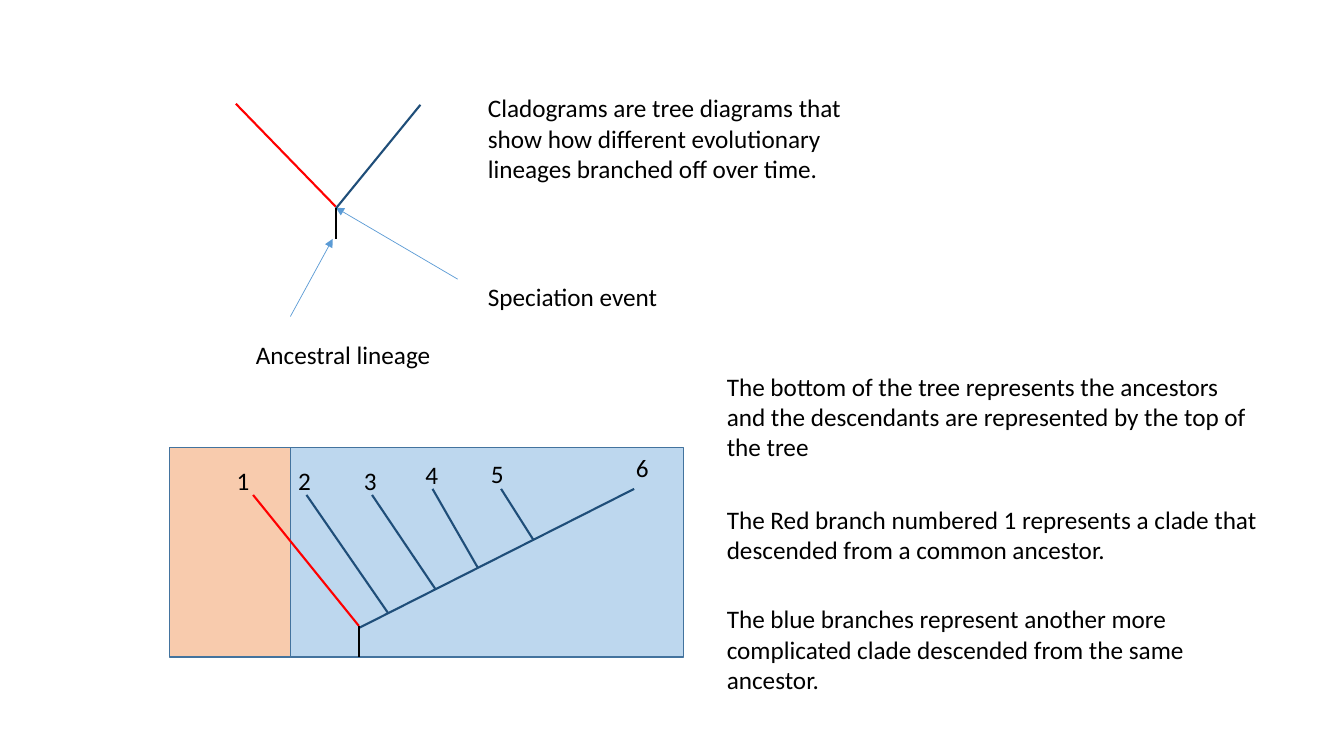
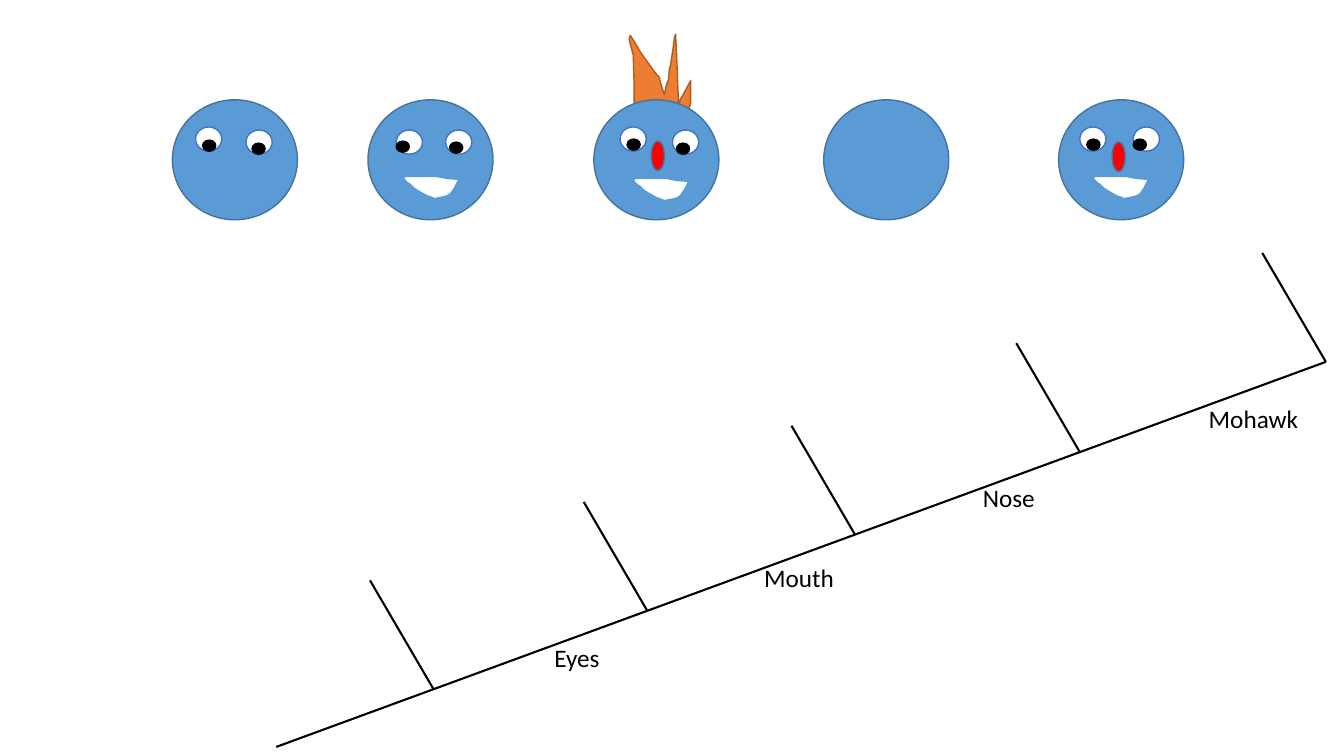
from dataclasses import dataclass
from typing import Optional

from lxml.etree import SubElement
from pptx import Presentation
from pptx.dml.color import RGBColor
from pptx.enum.shapes import MSO_CONNECTOR, MSO_SHAPE
from pptx.enum.text import MSO_AUTO_SIZE
from pptx.oxml.ns import qn
from pptx.shapes.autoshape import Shape
from pptx.slide import Slide
from pptx.util import Emu, Inches, Pt

Point = tuple[float, float]

# Every position and size counts cells of a one-inch grid.
CELL = Inches(1)
SLIDE_COLUMNS, SLIDE_ROWS = 13.33, 7.5
FONT_NAME, FONT_SIZE = "Calibri", Pt(18)
TEXT_ROW = 0.4

COLORS = {
    "text": "000000",
    "black": "000000",
    "white": "FFFFFF",
    "red": "FF0000",
    "navy": "1F4E79",
    "blue": "5B9BD5",
    "blue edge": "43739E",
    "eye edge": "4472C4",
    "pale blue": "BDD7EE",
    "peach": "F8CBAD",
    "orange": "ED7D31",
    "orange edge": "AF5C24",
}

HEAD_TOP = 0.99
HEAD_SIZE = (1.24, 1.19)
EYE_SIZE = (0.26, 0.24)
PUPIL_SIZE = (0.13, 0.11)
NOSE_SIZE = (0.13, 0.29)

# Outlines in hundredths of a cell, from the outline's top left corner.
MOUTH_OUTLINE = [
    (0, 2), (4, 6), (7, 8), (11, 12), (16, 15), (23, 19), (26, 20), (31, 22),
    (41, 20), (44, 19), (47, 17), (49, 14), (51, 11), (54, 5), (55, 3),
    (43, 2), (38, 1), (33, 0), (10, 0), (2, 0),
]
MOHAWK_OUTLINE = [
    (5, 87), (5, 50), (4, 20), (3, 17), (0, 5), (1, 1), (5, 7), (12, 19),
    (20, 30), (25, 37), (30, 43), (31, 48), (35, 60), (37, 50), (39, 45),
    (40, 34), (41, 31), (44, 11), (45, 3), (46, 0), (47, 18), (49, 71),
    (51, 64), (53, 61), (61, 46), (61, 69), (60, 72), (59, 77), (57, 83),
    (55, 90), (50, 89), (41, 86), (37, 85), (20, 84), (9, 85),
]


@dataclass(frozen=True)
class Label:
    text: str
    left: float
    top: float
    width: float
    height: float = TEXT_ROW


@dataclass(frozen=True)
class Line:
    start: Point
    end: Point
    color: str = "black"
    weight: float = 1.5
    arrow: bool = False


@dataclass(frozen=True)
class Face:
    """A head and its features, placed from the head's top left corner."""
    left: float
    eyes: tuple[Point, ...] = ()
    pupils: tuple[Point, ...] = ()
    mouth: Optional[Point] = None
    nose: Optional[Point] = None
    mohawk: Optional[Point] = None


EXPLANATIONS = [
    Label("Cladograms are tree diagrams that show how different evolutionary "
          "lineages branched off over time.", 4.74, 0.87, 3.71, 1.01),
    Label("Speciation event", 4.74, 2.74, 2.24),
    Label("Ancestral lineage", 2.44, 3.32, 2.1),
    Label("The bottom of the tree represents the ancestors and the "
          "descendants are represented by the top of the tree",
          7.11, 3.63, 5.45, 1.01),
    Label("The Red branch numbered 1 represents a clade that descended from "
          "a common ancestor.", 7.11, 4.95, 5.55, 0.71),
    Label("The blue branches represent another more complicated clade "
          "descended from the same ancestor.", 7.11, 5.94, 5.52, 1.01),
]
CLADE_NUMBER_PLACES = [
    (2.25, 4.57), (2.86, 4.57), (3.51, 4.57),
    (4.12, 4.51), (4.77, 4.5), (6.21, 4.44),
]

SPECIATION_LINES = [
    Line((4.54, 2.77), (3.33, 2.06), "blue", 0.5, arrow=True),
    Line((2.88, 3.14), (3.3, 2.37), "blue", 0.5, arrow=True),
    Line((2.34, 1.03), (3.33, 2.05), "red"),
    Line((3.33, 2.07), (4.17, 1.04), "navy"),
    Line((3.33, 2.06), (3.33, 2.37)),
]
CLADE_TRUNK = Line((3.56, 6.23), (6.29, 4.85), "navy")
CLADE_ROOTS = [
    Line((2.51, 4.91), (3.56, 6.21), "red"),
    Line((3.56, 6.21), (3.56, 6.52)),
]
# Where each branch leaves the trunk, and its tip.
CLADE_BRANCHES = [
    (3.85, (3.04, 4.91)), (4.32, (3.69, 4.91)),
    (4.74, (4.29, 4.85)), (5.29, (4.97, 4.85)),
]

FACES = [
    Face(1.71, ((0.23, 0.27), (0.73, 0.3)), ((0.3, 0.4), (0.79, 0.43))),
    Face(3.65, ((0.28, 0.3), (0.77, 0.3)), ((0.28, 0.41), (0.81, 0.42)),
         mouth=(0.35, 0.76)),
    Face(5.89, ((0.26, 0.27), (0.78, 0.3)), ((0.33, 0.39), (0.82, 0.43)),
         mouth=(0.39, 0.78), nose=(0.57, 0.41), mohawk=(0.35, -0.65)),
    Face(8.17),
    Face(10.5, ((0.21, 0.27), (0.74, 0.27)), ((0.28, 0.39), (0.74, 0.39)),
         mouth=(0.34, 0.76), nose=(0.53, 0.42)),
]
TRAIT_TRUNK = Line((2.74, 7.41), (13.15, 3.59))
TRAIT_BRANCH_COLUMNS = [4.3, 6.42, 8.48, 10.71, 13.15]
TRAIT_BRANCH_RISE = (-0.63, -1.08)
TRAITS = [("Eyes", 5.4), ("Mouth", 7.48), ("Nose", 9.65), ("Mohawk", 11.89)]
TRAIT_TOP, TRAIT_STEP, TRAIT_WIDTH = 6.32, -0.79, 1.4


def cells(count: float) -> Emu:
    return Emu(round(count * CELL))


def rgb(color: str) -> RGBColor:
    return RGBColor.from_string(COLORS[color])


def offset(origin: Point, step: Point) -> Point:
    return origin[0] + step[0], origin[1] + step[1]


def point_on(line: Line, column: float) -> Point:
    """Return the point of a line at the given column."""
    (left, start_row), (right, end_row) = line.start, line.end
    share = (column - left) / (right - left)
    return column, start_row + share * (end_row - start_row)


def paint(shape: Shape, fill: str, edge: str) -> None:
    shape.shadow.inherit = False
    shape.fill.solid()
    shape.fill.fore_color.rgb = rgb(fill)
    shape.line.color.rgb = rgb(edge)
    shape.line.width = Pt(1)


def draw_preset(slide: Slide, kind: MSO_SHAPE, corner: Point, size: Point,
                fill: str, edge: str) -> None:
    shape = slide.shapes.add_shape(kind, *map(cells, corner + size))
    paint(shape, fill, edge)


def draw_outline(slide: Slide, corner: Point, points: list[tuple[int, int]],
                 fill: str, edge: str) -> None:
    builder = slide.shapes.build_freeform(*points[0], scale=CELL / 100)
    builder.add_line_segments(points[1:], close=True)
    paint(builder.convert_to_shape(*map(cells, corner)), fill, edge)


def draw_line(slide: Slide, line: Line) -> None:
    connector = slide.shapes.add_connector(
        MSO_CONNECTOR.STRAIGHT, *map(cells, line.start + line.end))
    connector.line.color.rgb = rgb(line.color)
    connector.line.width = Pt(line.weight)
    if line.arrow:
        SubElement(connector.line._get_or_add_ln(), qn("a:tailEnd"),
                   type="triangle")
    SubElement(connector._element.spPr, qn("a:effectLst"))


def draw_label(slide: Slide, label: Label) -> None:
    box = slide.shapes.add_textbox(
        *map(cells, (label.left, label.top, label.width, label.height)))
    frame = box.text_frame
    frame.word_wrap = True
    frame.auto_size = MSO_AUTO_SIZE.SHAPE_TO_FIT_TEXT
    paragraph = frame.paragraphs[0]
    paragraph.text = label.text
    paragraph.font.name = FONT_NAME
    paragraph.font.size = FONT_SIZE
    paragraph.font.color.rgb = rgb("text")


def draw_face(slide: Slide, face: Face) -> None:
    corner = (face.left, HEAD_TOP)

    def draw_oval(place: Point, size: Point, fill: str, edge: str) -> None:
        draw_preset(slide, MSO_SHAPE.OVAL, offset(corner, place), size,
                    fill, edge)

    if face.mohawk:
        draw_outline(slide, offset(corner, face.mohawk), MOHAWK_OUTLINE,
                     "orange", "orange edge")
    draw_oval((0, 0), HEAD_SIZE, "blue", "blue edge")
    for eye in face.eyes:
        draw_oval(eye, EYE_SIZE, "white", "eye edge")
    if face.mouth:
        draw_outline(slide, offset(corner, face.mouth), MOUTH_OUTLINE,
                     "white", "blue")
    for pupil in face.pupils:
        draw_oval(pupil, PUPIL_SIZE, "black", "black")
    if face.nose:
        draw_oval(face.nose, NOSE_SIZE, "red", "blue edge")


def build_cladogram_slide(slide: Slide) -> None:
    for left, width, fill in ((1.68, 1.2, "peach"), (2.88, 3.9, "pale blue")):
        draw_preset(slide, MSO_SHAPE.RECTANGLE, (left, 4.44), (width, 2.08),
                    fill, "blue edge")
    branches = [Line(point_on(CLADE_TRUNK, column), tip, "navy")
                for column, tip in CLADE_BRANCHES]
    for line in [*SPECIATION_LINES, CLADE_TRUNK, *CLADE_ROOTS, *branches]:
        draw_line(slide, line)
    for number, (left, top) in enumerate(CLADE_NUMBER_PLACES, start=1):
        draw_label(slide, Label(str(number), left, top, 0.57))
    for label in EXPLANATIONS:
        draw_label(slide, label)


def build_trait_slide(slide: Slide) -> None:
    for face in FACES:
        draw_face(slide, face)
    draw_line(slide, TRAIT_TRUNK)
    for column in TRAIT_BRANCH_COLUMNS:
        base = point_on(TRAIT_TRUNK, column)
        draw_line(slide, Line(base, offset(base, TRAIT_BRANCH_RISE)))
    for index, (trait, left) in enumerate(TRAITS):
        top = TRAIT_TOP + index * TRAIT_STEP
        draw_label(slide, Label(trait, left, top, TRAIT_WIDTH))


def main() -> None:
    presentation = Presentation()
    presentation.slide_width = cells(SLIDE_COLUMNS)
    presentation.slide_height = cells(SLIDE_ROWS)
    blank_layout = presentation.slide_layouts.get_by_name("Blank")
    for build in (build_cladogram_slide, build_trait_slide):
        build(presentation.slides.add_slide(blank_layout))
    presentation.save("out.pptx")


if __name__ == "__main__":
    main()
